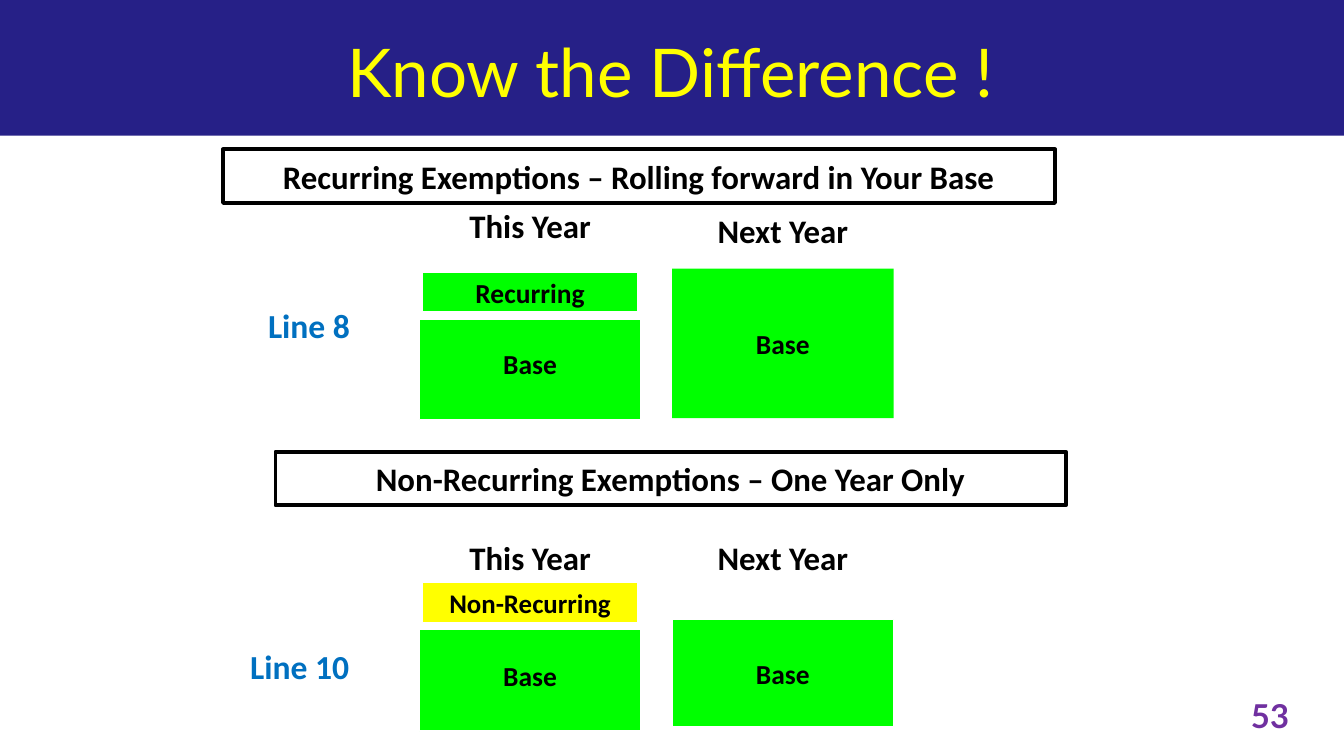
import pptx
import pptx.util
import pptx.dml.color
import pptx.enum.shapes
import pptx.enum.text

Pt = pptx.util.Pt
RGBColor = pptx.dml.color.RGBColor
Anchor = pptx.enum.text.MSO_ANCHOR
Align = pptx.enum.text.PP_ALIGN
RECT = pptx.enum.shapes.MSO_SHAPE.RECTANGLE

NAVY = RGBColor(0x26, 0x20, 0x87)
YELLOW = RGBColor(0xFF, 0xFF, 0x00)
GREEN = RGBColor(0x00, 0xFF, 0x00)
BLUE = RGBColor(0x00, 0x70, 0xC0)
PURPLE = RGBColor(0x70, 0x30, 0xA0)
BLACK = RGBColor(0, 0, 0)
WHITE = RGBColor(255, 255, 255)

WIDE, HIGH = 720, 405
THIS, NEXT, COL = 224.6, 360, 118.8  # column lefts and shared width
ROW = 28.8  # height of banners, heads and labels


def write(shape, text, size, color=BLACK, font="Calibri", bold=True,
          align=Align.CENTER, anchor=Anchor.MIDDLE):
    frame = shape.text_frame
    frame.word_wrap = True
    frame.vertical_anchor = anchor
    para = frame.paragraphs[0]
    para.alignment = align
    run = para.add_run()
    run.text = text
    run.font.name = font
    run.font.size = Pt(size)
    run.font.bold = bold
    run.font.color.rgb = color


def add_label(slide, box, text, size=17.6, **style):
    shape = slide.shapes.add_textbox(*map(Pt, box))
    write(shape, text, size, **style)


def add_block(slide, box, text="", size=14.7, fill=None, line=None, width=0.75):
    shape = slide.shapes.add_shape(RECT, *map(Pt, box))
    shape.shadow.inherit = False
    if fill is None:
        shape.fill.background()
    else:
        shape.fill.solid()
        shape.fill.fore_color.rgb = fill
    if line is None:
        shape.line.fill.background()
    else:
        shape.line.color.rgb = line
        shape.line.width = Pt(width)
    if text:
        write(shape, text, size)
    return shape


def add_header(slide, box, text):
    bar = add_block(slide, box, fill=NAVY)
    left, top, width, height = box
    title = slide.shapes.title
    title.left, title.top = Pt(left + 67.7), Pt(top + 11.5)
    title.width, title.height = Pt(583.2), Pt(51.8)
    write(title, text, 36, YELLOW, "Lato", False, anchor=Anchor.BOTTOM)
    bar.element.addnext(title.element)  # title sits above the bar


def add_section(slide, box, title, heads, strip, base, after, label):
    # Banner
    left, top, width = box
    add_block(slide, (left, top, width, ROW), title, 17.6,
              line=BLACK, width=2)

    # Column heads
    for x, text, drop in zip((THIS, NEXT), ("This Year", "Next Year"), heads):
        add_label(slide, (x, top + drop, COL, ROW), text)

    # This year: base with the exemption strip on top
    add_block(slide, (THIS, top + base, COL, 59.8), "Base",
              fill=GREEN, line=WHITE)
    text, fill, size, drop = strip
    add_block(slide, (THIS, top + drop, COL, 25), text, size,
              fill, WHITE, 4.5)

    # Next year: base only
    drop, height, line = after
    add_block(slide, (NEXT, top + drop, COL, height), "Base",
              fill=GREEN, line=line)

    # Line label
    text, x, drop = label
    add_label(slide, (x, top + drop, 108, ROW), text, 18, color=BLUE)


def main():
    deck = pptx.Presentation()
    deck.slide_width, deck.slide_height = Pt(WIDE), Pt(HIGH)
    slide = deck.slides.add_slide(deck.slide_layouts[5])

    add_header(slide, (0, 0, WIDE, 72.7), "Know the Difference !")
    add_section(slide, (119.5, 80, 445.7),
                "Recurring Exemptions – Rolling forward in Your Base",
                heads=(26.5, 29), strip=("Recurring", GREEN, 14.7, 64),
                base=84.9, after=(64, 80, None),
                label=("Line 8", 111.6, 80))
    add_section(slide, (147.6, 242, 423.4),
                "Non-Recurring Exemptions – One Year Only",
                heads=(42, 42), strip=("Non-Recurring", YELLOW, 14.4, 68.3),
                base=89.9, after=(89.9, 57.6, WHITE),
                label=("Line 10", 106.6, 100.5))

    # Page number
    add_label(slide, (648, 369.4, 49.7, 33.8), "53", color=PURPLE,
              font="Lato", align=Align.RIGHT, anchor=Anchor.TOP)
    deck.save("out.pptx")


if __name__ == "__main__":
    main()
